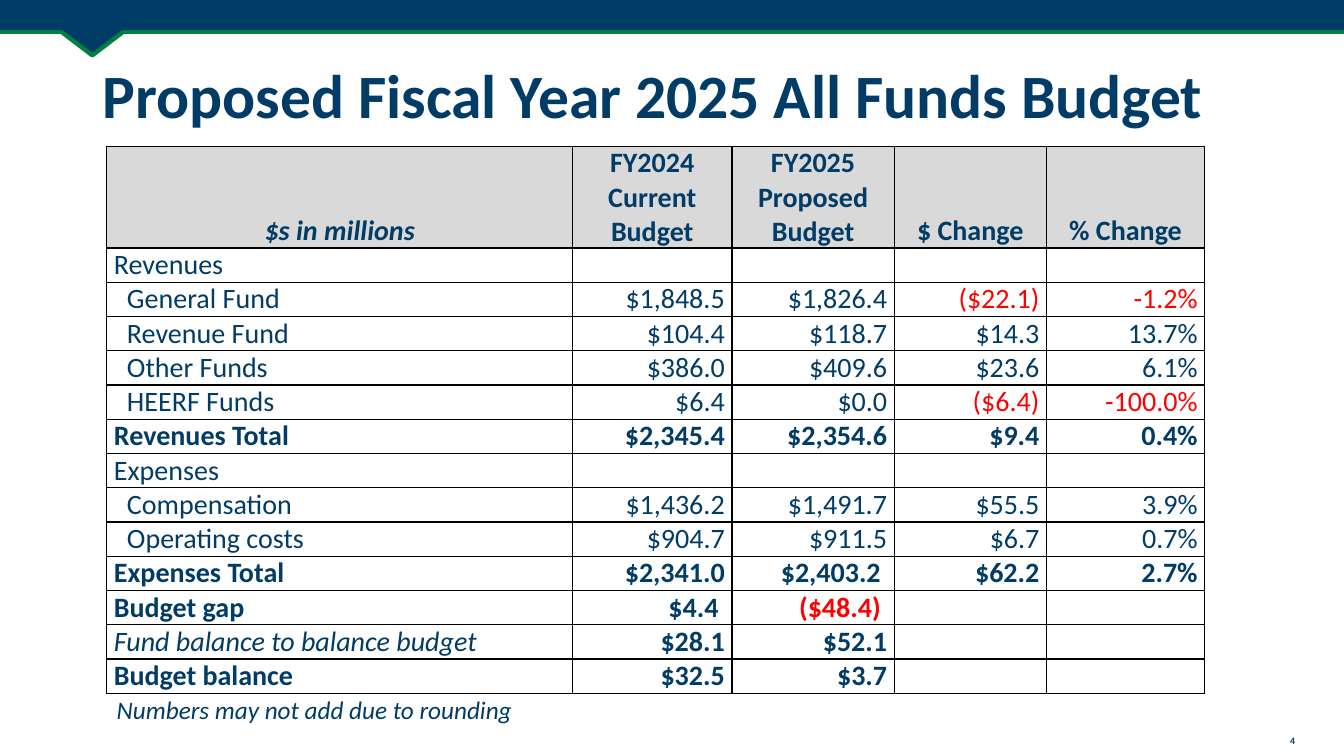
from lxml import etree
from pptx import Presentation
from pptx.dml.color import RGBColor
from pptx.enum.shapes import MSO_CONNECTOR, MSO_SHAPE
from pptx.enum.text import MSO_ANCHOR as ANCHOR, PP_ALIGN as ALIGN
from pptx.oxml import parse_xml
from pptx.oxml.ns import nsdecls, qn
from pptx.util import Inches, Pt

COLORS = {"navy": "003C66", "green": "008042", "gray": "D9D9D9",
          "red": "FF0000", "black": "000000"}
FONT = "Calibri"

HEADERS = ["$s in millions", "FY2024 Current Budget", "FY2025 Proposed Budget",
           "$ Change", "% Change"]
# Row style, label, then the values
ROWS = [
    ("plain", "Revenues"),
    ("item", "General Fund", "$1,848.5", "$1,826.4", "($22.1)", "-1.2%"),
    ("item", "Revenue Fund", "$104.4", "$118.7", "$14.3", "13.7%"),
    ("item", "Other Funds", "$386.0", "$409.6", "$23.6", "6.1%"),
    ("item", "HEERF Funds", "$6.4", "$0.0", "($6.4)", "-100.0%"),
    ("total", "Revenues Total", "$2,345.4", "$2,354.6", "$9.4", "0.4%"),
    ("plain", "Expenses"),
    ("item", "Compensation", "$1,436.2", "$1,491.7", "$55.5", "3.9%"),
    ("item", "Operating costs", "$904.7", "$911.5", "$6.7", "0.7%"),
    ("total", "Expenses Total", "$2,341.0", "$2,403.2 ", "$62.2", "2.7%"),
    ("total", "Budget gap", "$4.4 ", "($48.4) "),
    ("balance", "Fund balance to balance budget", "$28.1", "$52.1"),
    ("total", "Budget balance", "$32.5", "$3.7"),
]
COL_WIDTHS = [4.62, 1.58, 1.61, 1.51, 1.57]
HEADER_HEIGHT, ROW_HEIGHT = 1.01, 0.34


def rgb(name):
    return RGBColor.from_string(COLORS[name])


def add_run(p, text, size, color="navy", bold=False, italic=False):
    r = p.add_run()
    r.text = text
    font = r.font
    font.name, font.size, font.bold, font.italic = FONT, Pt(size), bold, italic
    font.color.rgb = rgb(color)


def add_text(s, box, text, size, align=ALIGN.LEFT, anchor=ANCHOR.TOP,
             spacing=1.0, **style):
    tf = s.shapes.add_textbox(*map(Inches, box)).text_frame
    tf.word_wrap = True
    tf.vertical_anchor = anchor
    p = tf.paragraphs[0]
    p.alignment, p.line_spacing = align, spacing
    add_run(p, text, size, **style)


def add_banner(s, left, top, width, height):
    """Navy band with a green lower edge and a notch pointing down."""
    edge_y = Inches(top + height + 0.02)
    edge = s.shapes.add_connector(MSO_CONNECTOR.STRAIGHT, Inches(left), edge_y,
                                  Inches(left + width), edge_y)
    etree.SubElement(edge.line._get_or_add_ln().getparent(), qn("a:effectLst"))
    notch = s.shapes.add_shape(MSO_SHAPE.ISOSCELES_TRIANGLE, Inches(left + 0.39),
                               Inches(top + 0.25), Inches(1.05), Inches(0.4))
    notch.rotation = 180
    band = s.shapes.add_shape(MSO_SHAPE.RECTANGLE,
                              *map(Inches, (left, top, width, height)))
    for sp in (notch, band):
        sp.shadow.inherit = False
        sp.fill.solid()
        sp.fill.fore_color.rgb = rgb("navy")
    band.line.fill.background()
    for outlined in (edge, notch):
        outlined.line.color.rgb = rgb("green")
        outlined.line.width = Pt(3)


def format_cell(cell, fill=None):
    cell.vertical_anchor = ANCHOR.BOTTOM
    cell.margin_left = cell.margin_right = Inches(0.07)
    cell.margin_top = cell.margin_bottom = 0
    tc_pr = cell._tc.get_or_add_tcPr()
    for side in "LRTB":
        tc_pr.append(parse_xml(
            f'<a:ln{side} {nsdecls("a")} w="{Pt(1)}"><a:solidFill>'
            f'<a:srgbClr val="{COLORS["black"]}"/></a:solidFill></a:ln{side}>'))
    if fill:
        cell.fill.solid()
        cell.fill.fore_color.rgb = rgb(fill)
    else:
        cell.fill.background()


def add_budget_table(s, left, top):
    width = sum(COL_WIDTHS)
    height = HEADER_HEIGHT + ROW_HEIGHT * len(ROWS)
    table = s.shapes.add_table(len(ROWS) + 1, len(COL_WIDTHS),
                               *map(Inches, (left, top, width, height))).table
    table.first_row = table.horz_banding = False
    for column, col_width in zip(table.columns, COL_WIDTHS):
        column.width = Inches(col_width)
    for i, row in enumerate(table.rows):
        row.height = Inches(ROW_HEIGHT if i else HEADER_HEIGHT)
        for cell in row.cells:
            format_cell(cell, None if i else "gray")

    for c, text in enumerate(HEADERS):
        p = table.cell(0, c).text_frame.paragraphs[0]
        p.alignment = ALIGN.CENTER
        add_run(p, text, 20, bold=True, italic=c == 0)

    for i, (kind, label, *values) in enumerate(ROWS, 1):
        p = table.cell(i, 0).text_frame.paragraphs[0]
        p.alignment = ALIGN.JUSTIFY
        if kind == "item":
            p._p.get_or_add_pPr().set("marL", str(Inches(0.13)))
        add_run(p, label, 20, bold=kind == "total", italic=kind == "balance")
        for c, value in enumerate(values, 1):
            p = table.cell(i, c).text_frame.paragraphs[0]
            p.alignment = ALIGN.RIGHT
            add_run(p, value, 20, "red" if value[0] in "(-" else "navy",
                    bold=kind in ("total", "balance"))


def main():
    prs = Presentation()
    prs.slide_width, prs.slide_height = Inches(13.33), Inches(7.5)
    s = prs.slides.add_slide(prs.slide_layouts[6])
    add_banner(s, 0, -0.1, 13.33, 0.4)
    add_text(s, (12.57, 7.24, 0.5, 0.22), "4", 7, ALIGN.CENTER, bold=True)
    add_text(s, (0.92, 0.5, 11.5, 0.95), "Proposed Fiscal Year 2025 All Funds Budget",
             44, anchor=ANCHOR.MIDDLE, spacing=0.9, bold=True)
    add_budget_table(s, 1.06, 1.45)
    add_text(s, (1.06, 6.84, 5.26, 0.4), "Numbers may not add due to rounding",
             18, italic=True)
    prs.save("out.pptx")


if __name__ == "__main__":
    main()
